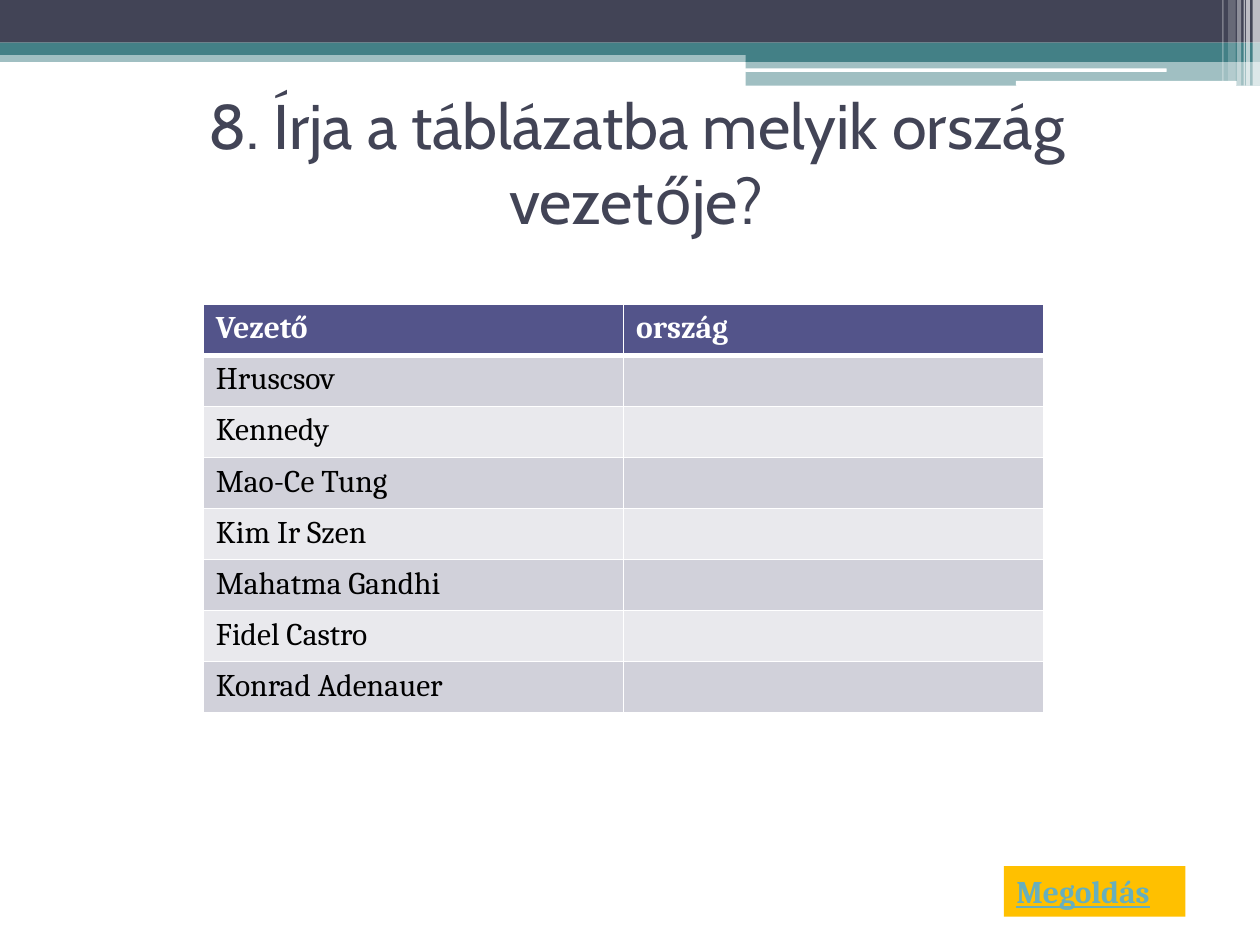
from lxml import etree
from pptx import Presentation
from pptx.dml.color import RGBColor
from pptx.enum.shapes import MSO_SHAPE as Shape
from pptx.enum.text import MSO_ANCHOR as Anchor, MSO_AUTO_SIZE as AutoSize, PP_ALIGN as Align
from pptx.oxml import parse_xml
from pptx.oxml.ns import nsdecls, qn
from pptx.util import Cm, Pt

WHITE = RGBColor(0xFF, 0xFF, 0xFF)
BLACK = RGBColor(0x00, 0x00, 0x00)
SLATE = RGBColor(0x42, 0x44, 0x56)
TEAL = RGBColor(0x43, 0x80, 0x86)
INDIGO = RGBColor(0x53, 0x54, 0x8A)
DARK_BAND = RGBColor(0xD1, 0xD1, 0xDA)
LIGHT_BAND = RGBColor(0xE9, 0xE9, 0xED)
AMBER = RGBColor(0xFF, 0xC0, 0x00)
LINK_BLUE = RGBColor(0x67, 0xAF, 0xBD)


def add_bar(left, top, width, height, color, opacity=100, kind=Shape.RECTANGLE):
    """Add a borderless bar; lengths in centimetres, opacity in percent."""
    bar = slide.shapes.add_shape(kind, Cm(left), Cm(top), Cm(width), Cm(height))
    bar.shadow.inherit = False
    bar.line.fill.background()
    bar.fill.solid()
    bar.fill.fore_color.rgb = color
    if opacity < 100:
        srgb = bar.fill._xPr.find(".//" + qn("a:srgbClr"))
        etree.SubElement(srgb, qn("a:alpha"), val=str(opacity * 1000))
    return bar


def style_font(paragraph, name, size, color, bold=False):
    font = paragraph.font
    font.name, font.size, font.bold = name, Pt(size), bold
    font.color.rgb = color


prs = Presentation()
prs.slide_width, prs.slide_height = Cm(25.4), Cm(19.05)
slide = prs.slides.add_slide(prs.slide_layouts[6])

# Header bands
add_bar(0, 1.02, 25.4, 0.23, TEAL, 50)
add_bar(0, 0, 25.4, 0.86, SLATE)
add_bar(0, 0.86, 25.4, 0.25, TEAL)
add_bar(15.03, 1, 10.37, 0.25, TEAL)
add_bar(15.03, 1.23, 10.37, 0.5, TEAL, 50)
add_bar(15.02, 1.38, 8.5, 0.07, WHITE, kind=Shape.ROUNDED_RECTANGLE)
add_bar(20.48, 1.63, 4.45, 0.1, WHITE, kind=Shape.ROUNDED_RECTANGLE)

# Translucent stripes at the right edge
for left, width, height, opacity in [
    (25.25, 0.15, 1.73, 65),
    (25.12, 0.08, 1.73, 65),
    (25.07, 0.03, 1.73, 60),
    (24.94, 0.08, 1.73, 40),
    (24.76, 0.15, 1.63, 20),
    (24.64, 0.03, 1.63, 30),
]:
    add_bar(left, 0, width, height, WHITE, opacity)

# Question
question = slide.shapes.add_textbox(Cm(1.4), Cm(1.78), Cm(22.86), Cm(2.97)).text_frame
question.word_wrap = True
question.vertical_anchor = Anchor.MIDDLE
question.text = "8. Írja a táblázatba melyik ország vezetője?"
question.paragraphs[0].alignment = Align.CENTER
style_font(question.paragraphs[0], "Cabin", 36, SLATE)

# Solution button
button = add_bar(20.24, 17.46, 3.66, 1.02, AMBER).text_frame
button.word_wrap = False
button.auto_size = AutoSize.SHAPE_TO_FIT_TEXT
button.vertical_anchor = Anchor.TOP
button.text = "Megoldás"
button.paragraphs[0].alignment = Align.LEFT
style_font(button.paragraphs[0], "Cambria", 18, LINK_BLUE, bold=True)
button.paragraphs[0].font.underline = True

# Leaders and their countries
rows = [("Vezető", "ország")] + [(leader, "") for leader in (
    "Hruscsov", "Kennedy", "Mao-Ce Tung", "Kim Ir Szen",
    "Mahatma Gandhi", "Fidel Castro", "Konrad Adenauer")]
leaders = slide.shapes.add_table(
    len(rows), 2, Cm(4.1), Cm(6.13), Cm(16.94), Cm(1.03 * len(rows))).table

for r, texts in enumerate(rows):
    is_header = r == 0
    band = INDIGO if is_header else DARK_BAND if r % 2 else LIGHT_BAND
    top_width = 3 if r == 1 else 1
    bottom_width = 3 if is_header else 1
    for c, text in enumerate(texts):
        cell = leaders.cell(r, c)
        cell.text = text
        style_font(cell.text_frame.paragraphs[0], "Cambria", 18,
                   WHITE if is_header else BLACK, bold=is_header)
        borders = cell._tc.get_or_add_tcPr()
        for side, width in zip("LRTB", (1, 1, top_width, bottom_width)):
            borders.append(parse_xml(
                f'<a:ln{side} {nsdecls("a")} w="{Pt(width)}"><a:solidFill>'
                f'<a:srgbClr val="{WHITE}"/></a:solidFill></a:ln{side}>'))
        cell.fill.solid()
        cell.fill.fore_color.rgb = band

prs.save("out.pptx")
